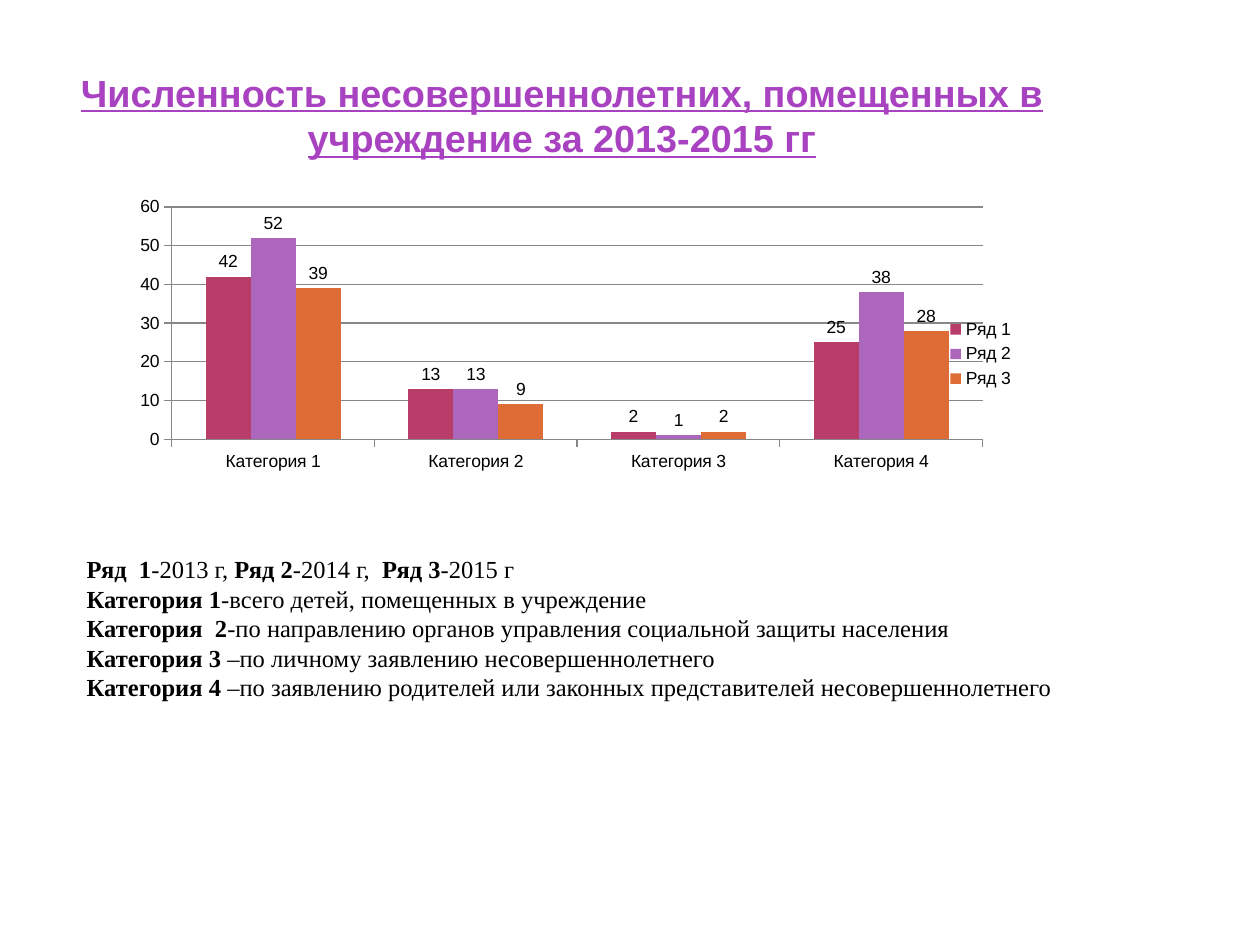
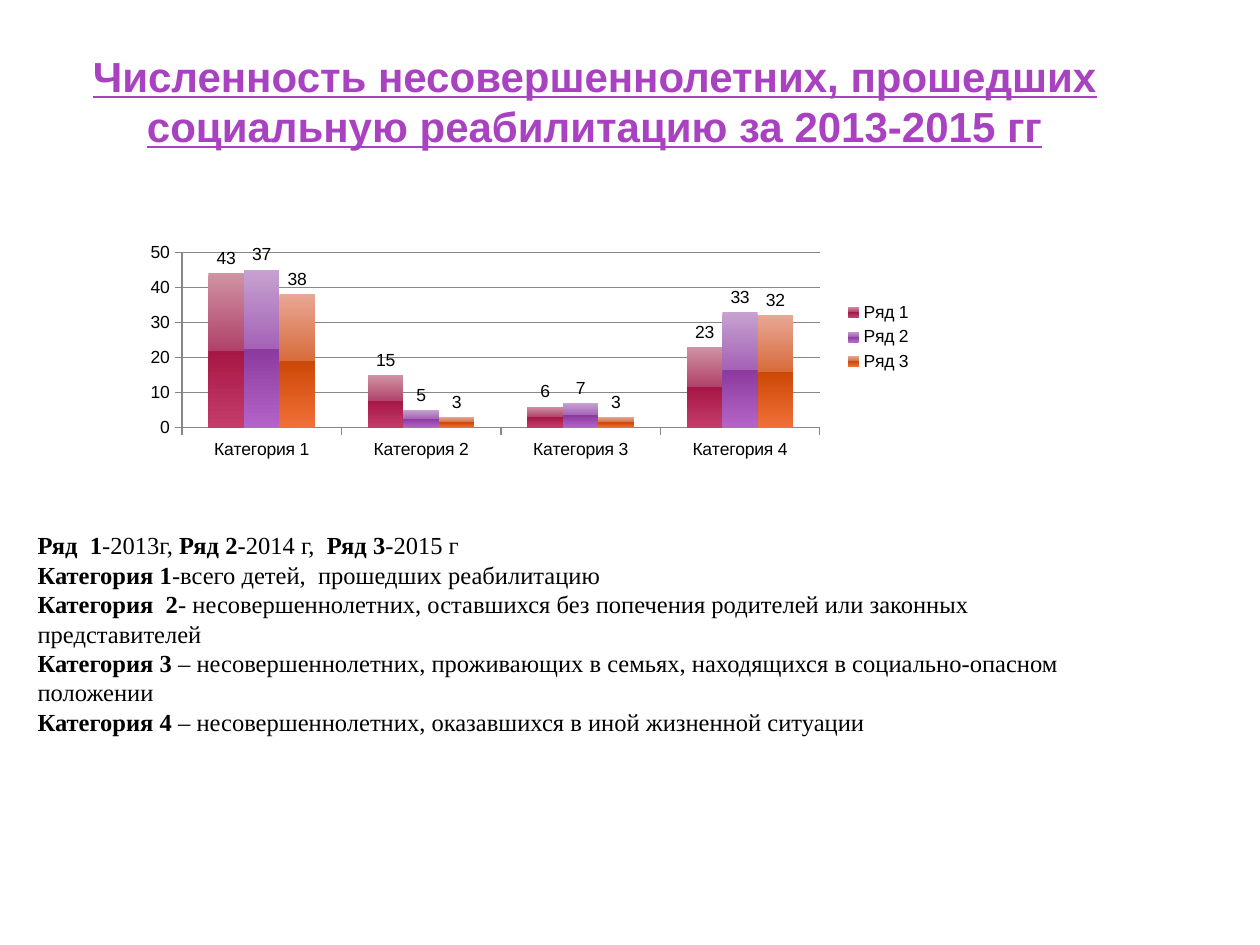
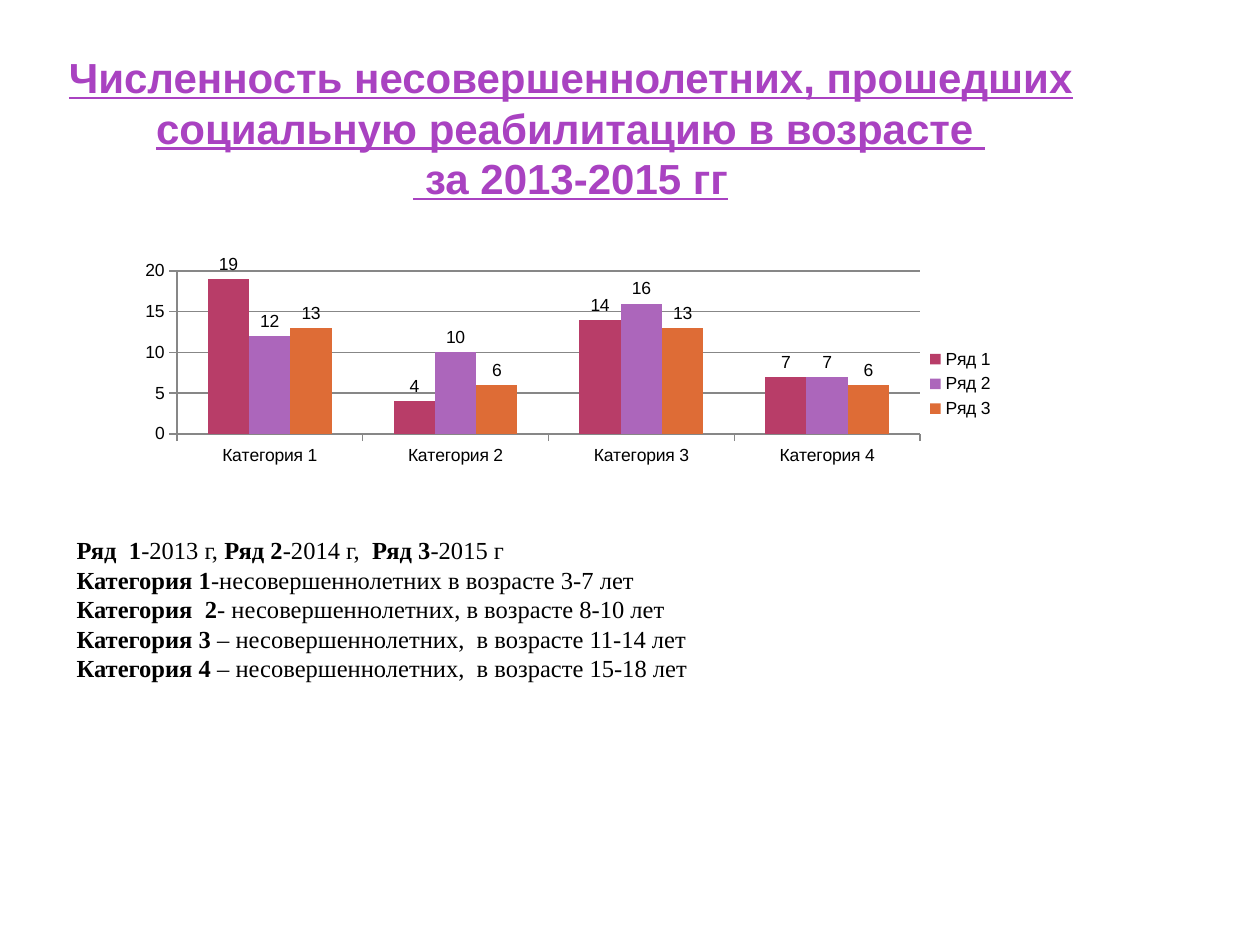
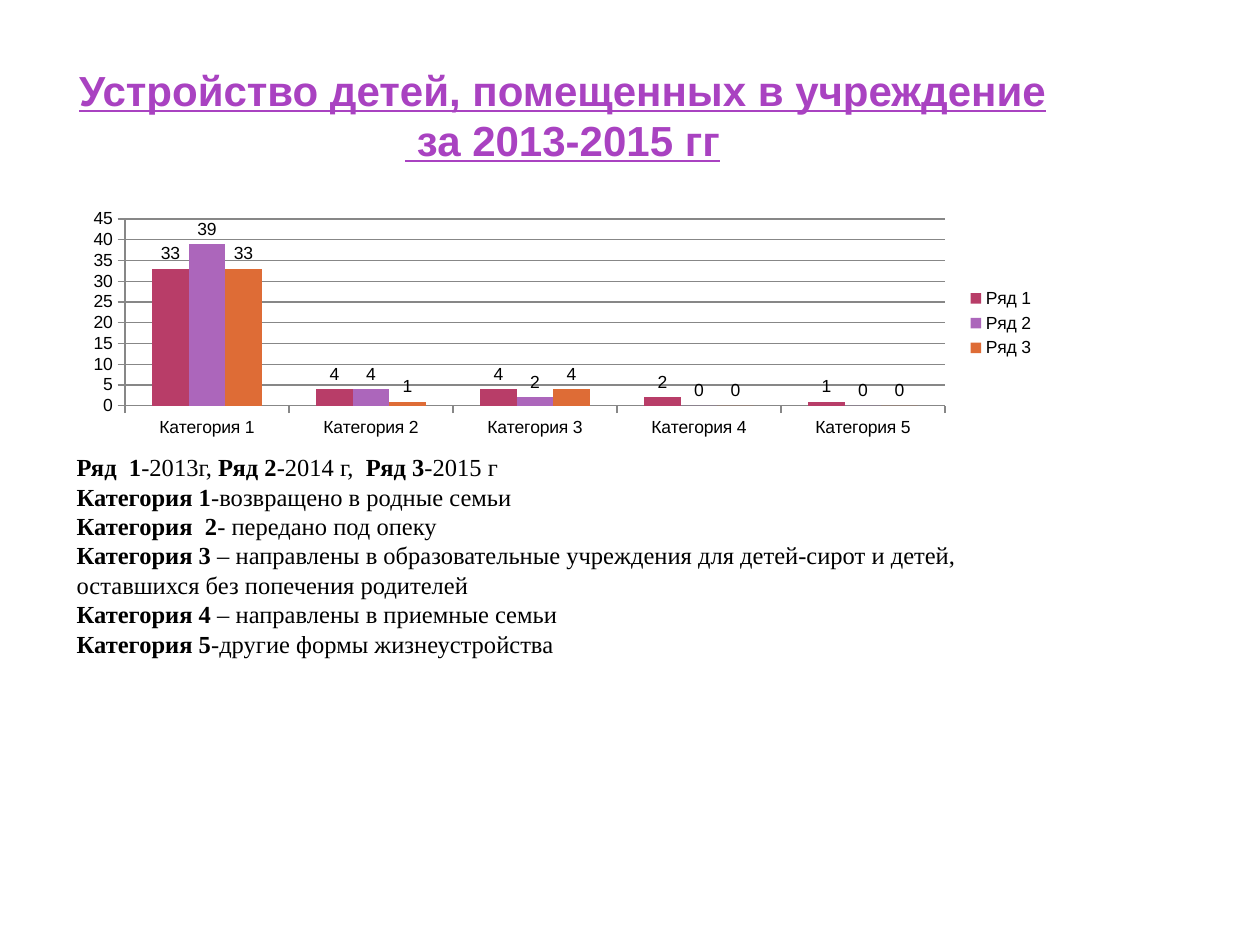
from dataclasses import dataclass, field
from typing import NamedTuple

from pptx import Presentation
from pptx.chart.chart import Chart
from pptx.chart.data import CategoryChartData
from pptx.dml.color import RGBColor
from pptx.enum.chart import XL_CHART_TYPE, XL_LABEL_POSITION, XL_LEGEND_POSITION, XL_TICK_MARK
from pptx.enum.text import MSO_ANCHOR, PP_ALIGN
from pptx.oxml import parse_xml
from pptx.oxml.ns import nsdecls
from pptx.slide import Slide
from pptx.util import Inches, Pt


class Box(NamedTuple):
    """Left, top, width and height, in inches or as shares of a chart."""

    left: float
    top: float
    width: float
    height: float

    def lengths(self) -> list[Inches]:
        """Return the four values as lengths."""
        return [Inches(value) for value in self]


@dataclass(frozen=True)
class Theme:
    """Colours, fonts and type sizes of the deck."""

    title: str = "A942C1"
    ink: str = "000000"
    grid: str = "878787"
    years: tuple[str, ...] = ("B83D68", "AC66BB", "DE6C36")
    glossy_years: tuple[tuple[str, ...], ...] = (
        ("D093A3", "B0426A", "A61746", "C43C6A"),
        ("C6A2D0", "A562B6", "8C3A9E", "B464C8"),
        ("E8A694", "D86C3C", "CC4806", "F07038"),
    )
    heading_font: str = "Arial"
    body_font: str = "Times New Roman"
    title_size: float = 24
    body_size: float = 14
    chart_size: float = 10


@dataclass(frozen=True)
class Report:
    """One slide: a title, a yearly column chart and its key."""

    title: str
    title_box: Box
    chart_box: Box
    plot: Box
    yearly_values: tuple[tuple[int, ...], ...]
    axis_top: int
    axis_step: int
    key: str
    key_box: Box
    title_size: float = 24
    glossy: bool = False
    shown_values: dict[int, str] = field(default_factory=dict)


THEME = Theme()

REPORTS = (
    Report(
        title="Численность несовершеннолетних, помещенных в учреждение за 2013-2015 гг",
        title_box=Box(0.5, 0.35, 7.92, 0.92),
        title_size=21.6,
        chart_box=Box(0.35, 1.55, 7.8, 2.52),
        plot=Box(0.13, 0.037, 0.825, 0.732),
        yearly_values=((42, 13, 2, 25), (52, 13, 1, 38), (39, 9, 2, 28)),
        axis_top=60,
        axis_step=10,
        key="**Ряд  1**-2013 г, **Ряд 2**-2014 г,  **Ряд 3**-2015 г\n"
        "**Категория 1**-всего детей, помещенных в учреждение\n"
        "**Категория  2**-по направлению органов управления социальной защиты населения\n"
        "**Категория 3** –по личному заявлению несовершеннолетнего\n"
        "**Категория 4** –по заявлению родителей или законных представителей несовершеннолетнего",
        key_box=Box(0.59, 4.35, 8.03, 1.28),
    ),
    Report(
        title="Численность несовершеннолетних, прошедших социальную реабилитацию за 2013-2015 гг",
        title_box=Box(0.5, 0, 8.44, 1.2),
        chart_box=Box(0.98, 1.7, 6.36, 1.95),
        plot=Box(0.073, 0.155, 0.796, 0.716),
        yearly_values=((44, 15, 6, 23), (45, 5, 7, 33), (38, 3, 3, 32)),
        axis_top=50,
        axis_step=10,
        key="**Ряд  1**-2013г, **Ряд 2**-2014 г,  **Ряд 3**-2015 г\n"
        "**Категория 1**-всего детей,  прошедших реабилитацию\n"
        "**Категория  2**- несовершеннолетних, оставшихся без попечения родителей или законных представителей\n"
        "**Категория 3** – несовершеннолетних, проживающих в семьях, находящихся в социально-опасном положении\n"
        "**Категория 4** – несовершеннолетних, оказавшихся в иной жизненной ситуации",
        key_box=Box(0.2, 4.16, 8.5, 1.74),
        glossy=True,
        shown_values={0: "43", 1: "37"},
    ),
    Report(
        title="Численность несовершеннолетних, прошедших социальную реабилитацию в возрасте \v за 2013-2015 гг",
        title_box=Box(0.43, 0.36, 8.2, 1.25),
        chart_box=Box(0.59, 2.02, 7.4, 2.05),
        plot=Box(0.11, 0.062, 0.797, 0.632),
        yearly_values=((19, 4, 14, 7), (12, 10, 16, 7), (13, 6, 13, 6)),
        axis_top=20,
        axis_step=5,
        key="**Ряд  1**-2013 г, **Ряд 2**-2014 г,  **Ряд 3**-2015 г\n"
        "**Категория 1**-несовершеннолетних в возрасте 3-7 лет\n"
        "**Категория  2**- несовершеннолетних, в возрасте 8-10 лет\n"
        "**Категория 3** – несовершеннолетних,  в возрасте 11-14 лет\n"
        "**Категория 4** – несовершеннолетних,  в возрасте 15-18 лет",
        key_box=Box(0.51, 4.2, 7.56, 1.28),
    ),
    Report(
        title="Устройство детей, помещенных в учреждение\v за 2013-2015 гг",
        title_box=Box(0.51, 0.21, 7.91, 1.1),
        chart_box=Box(0.59, 1.62, 7.72, 1.89),
        plot=Box(0.052, 0.063, 0.843, 0.784),
        yearly_values=((33, 4, 4, 2, 1), (39, 4, 2, 0, 0), (33, 1, 4, 0, 0)),
        axis_top=45,
        axis_step=5,
        key="**Ряд  1**-2013г, **Ряд 2**-2014 г,  **Ряд 3**-2015 г\n"
        "**Категория 1**-возвращено в родные семьи\n"
        "**Категория  2**- передано под опеку\n"
        "**Категория 3** – направлены в образовательные учреждения для детей-сирот и детей, "
        "оставшихся без попечения родителей\n"
        "**Категория 4** – направлены в приемные семьи\n"
        "**Категория 5**-другие формы жизнеустройства",
        key_box=Box(0.51, 3.54, 8.19, 1.74),
    ),
)


def add_text(
    slide: Slide,
    text: str,
    box: Box,
    *,
    font: str,
    size: float,
    color: str = THEME.ink,
    bold: bool = False,
    underline: bool = False,
    align: PP_ALIGN = PP_ALIGN.LEFT,
    anchor: MSO_ANCHOR = MSO_ANCHOR.TOP,
    insets: tuple[float, float] = (0.1, 0.05),
) -> None:
    """Draw text whose parts between double asterisks are bold."""
    frame = slide.shapes.add_textbox(*box.lengths()).text_frame
    frame.word_wrap = True
    frame.vertical_anchor = anchor
    frame.margin_left = frame.margin_right = Inches(insets[0])
    frame.margin_top = frame.margin_bottom = Inches(insets[1])
    for index, line in enumerate(text.split("\n")):
        paragraph = frame.add_paragraph() if index else frame.paragraphs[0]
        paragraph.alignment = align
        for part_index, part in enumerate(line.split("**")):
            for row_index, row in enumerate(part.split("\v")):
                if row_index:
                    paragraph.add_line_break()
                if not row:
                    continue
                run = paragraph.add_run()
                run.text = row
                run.font.name = font
                run.font.size = Pt(size)
                run.font.color.rgb = RGBColor.from_string(color)
                run.font.bold = bold or part_index % 2 == 1
                run.font.underline = underline


def place_plot(chart: Chart, plot: Box) -> None:
    """Fix the inner plot area at the given shares of the chart."""
    area = chart.element.xpath("c:chart/c:plotArea")[0]
    for automatic in area.xpath("c:layout"):
        area.remove(automatic)
    shares = "".join(f'<c:{tag} val="{share}"/>' for tag, share in zip("xywh", plot))
    area.insert(0, parse_xml(
        f'<c:layout {nsdecls("c")}><c:manualLayout><c:layoutTarget val="inner"/>'
        f'<c:xMode val="edge"/><c:yMode val="edge"/>{shares}</c:manualLayout></c:layout>'
    ))


def add_gloss(chart: Chart) -> None:
    """Fill each series with a gradient that breaks halfway down."""
    for series, colors in zip(chart.element.xpath(".//c:ser"), THEME.glossy_years):
        stops = "".join(
            f'<a:gs pos="{share * 1000}"><a:srgbClr val="{color}"/></a:gs>'
            for share, color in zip((0, 50, 50, 100), colors)
        )
        series.get_or_add_spPr().insert(0, parse_xml(
            f'<a:gradFill {nsdecls("a")} rotWithShape="1"><a:gsLst>{stops}</a:gsLst>'
            '<a:lin ang="5400000" scaled="0"/></a:gradFill>'
        ))


def style_axes(chart: Chart, report: Report) -> None:
    """Set the scale, tick marks and lines of both axes."""
    grid = RGBColor.from_string(THEME.grid)
    values = chart.value_axis
    values.minimum_scale = 0
    values.maximum_scale = report.axis_top
    values.major_unit = report.axis_step
    values.has_major_gridlines = True
    for axis in (chart.category_axis, values):
        axis.major_tick_mark = XL_TICK_MARK.OUTSIDE
        axis.minor_tick_mark = XL_TICK_MARK.NONE
    for line in (chart.category_axis.format.line, values.format.line, values.major_gridlines.format.line):
        line.color.rgb = grid
        line.width = Pt(0.75)


def add_yearly_chart(slide: Slide, report: Report) -> None:
    """Draw one group of yearly columns for each category."""
    data = CategoryChartData()
    data.categories = [f"Категория {number + 1}" for number in range(len(report.yearly_values[0]))]
    for number, values in enumerate(report.yearly_values, 1):
        data.add_series(f"Ряд {number}", values)
    chart = slide.shapes.add_chart(XL_CHART_TYPE.COLUMN_CLUSTERED, *report.chart_box.lengths(), data).chart
    chart.has_title = False
    chart.font.name = THEME.heading_font
    chart.font.size = Pt(THEME.chart_size)
    chart.font.color.rgb = RGBColor.from_string(THEME.ink)
    chart.has_legend = True
    chart.legend.position = XL_LEGEND_POSITION.RIGHT
    chart.legend.include_in_layout = False
    columns = chart.plots[0]
    columns.gap_width = 150
    columns.overlap = 0
    columns.vary_by_categories = False
    for index, series in enumerate(columns.series):
        series.invert_if_negative = False
        if not report.glossy:
            series.format.fill.solid()
            series.format.fill.fore_color.rgb = RGBColor.from_string(THEME.years[index])
        series.data_labels.show_value = True
        series.data_labels.position = XL_LABEL_POSITION.OUTSIDE_END
        if index in report.shown_values:
            label = series.points[0].data_label
            label.text_frame.text = report.shown_values[index]
            label.position = XL_LABEL_POSITION.OUTSIDE_END
            digits = label.text_frame.paragraphs[0].runs[0].font
            digits.name = THEME.heading_font
            digits.size = Pt(THEME.chart_size)
            digits.color.rgb = RGBColor.from_string(THEME.ink)
    if report.glossy:
        add_gloss(chart)
    style_axes(chart, report)
    place_plot(chart, report.plot)


def add_report(slide: Slide, report: Report) -> None:
    """Draw the title, chart and key of one report."""
    add_text(
        slide,
        report.title,
        report.title_box,
        font=THEME.heading_font,
        size=report.title_size,
        color=THEME.title,
        bold=True,
        underline=True,
        align=PP_ALIGN.CENTER,
        anchor=MSO_ANCHOR.BOTTOM,
        insets=(0.05, 0),
    )
    add_yearly_chart(slide, report)
    add_text(slide, report.key, report.key_box, font=THEME.body_font, size=THEME.body_size)


def main() -> None:
    """Build and save the deck."""
    deck = Presentation()
    deck.slide_width, deck.slide_height = Inches(10), Inches(7.5)
    blank = deck.slide_layouts[6]
    for report in REPORTS:
        add_report(deck.slides.add_slide(blank), report)
    deck.save("out.pptx")


if __name__ == "__main__":
    main()
